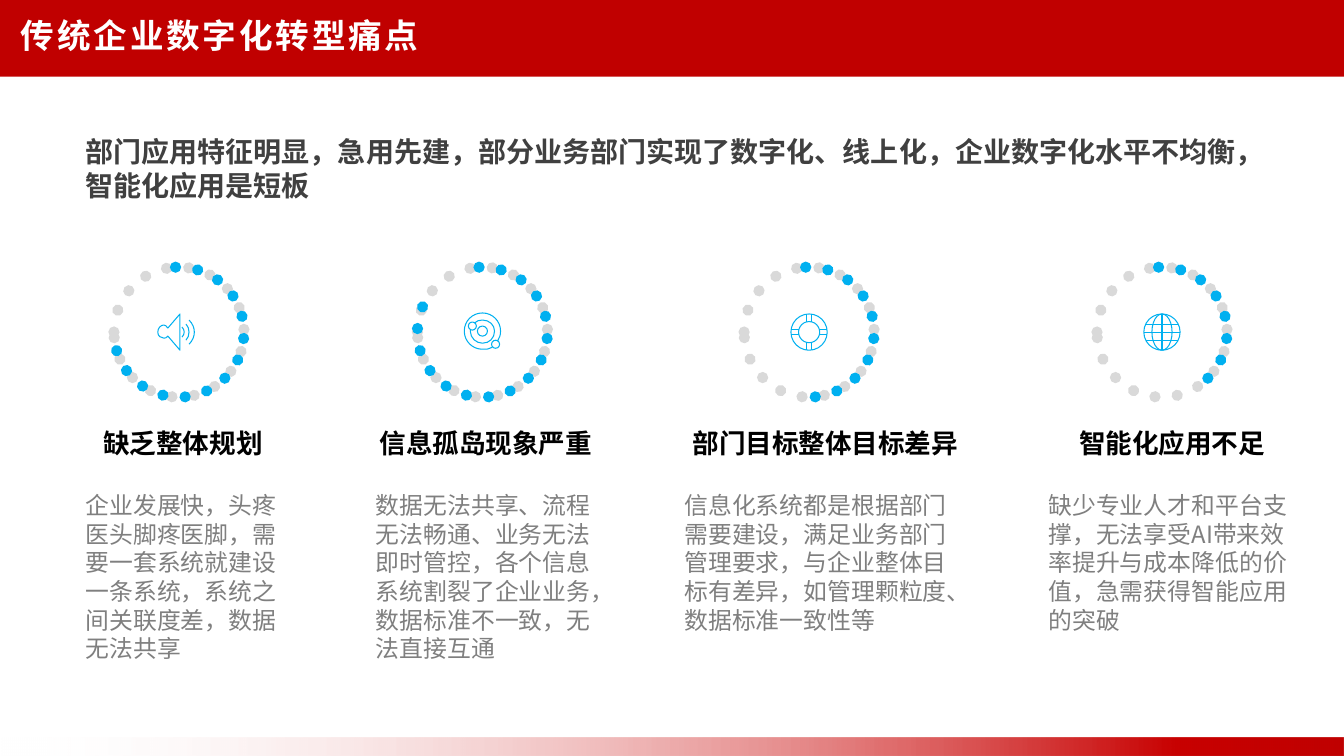
from copy import deepcopy
from dataclasses import dataclass

from lxml import etree
from pptx import Presentation
from pptx.dml.color import RGBColor
from pptx.enum.dml import MSO_LINE
from pptx.enum.shapes import MSO_CONNECTOR, MSO_SHAPE
from pptx.enum.text import MSO_ANCHOR, MSO_AUTO_SIZE, PP_ALIGN
from pptx.oxml.ns import qn
from pptx.util import Inches, Pt

RECTANGLE, OVAL, ARC = MSO_SHAPE.RECTANGLE, MSO_SHAPE.OVAL, MSO_SHAPE.ARC
STRAIGHT, ROUND_DOT = MSO_CONNECTOR.STRAIGHT, MSO_LINE.ROUND_DOT
LEFT, CENTER = PP_ALIGN.LEFT, PP_ALIGN.CENTER
TOP, MIDDLE = MSO_ANCHOR.TOP, MSO_ANCHOR.MIDDLE
GROW, FIXED = MSO_AUTO_SIZE.SHAPE_TO_FIT_TEXT, MSO_AUTO_SIZE.NONE

WHITE = RGBColor(0xFF, 0xFF, 0xFF)
BLACK = RGBColor(0x00, 0x00, 0x00)
RED = RGBColor(0xC0, 0x00, 0x00)
BRIGHT_RED = RGBColor(0xC8, 0x00, 0x00)
BLUE = RGBColor(0x00, 0xB0, 0xF0)
PALE_GRAY = RGBColor(0xD9, 0xD9, 0xD9)
MID_GRAY = RGBColor(0x7F, 0x7F, 0x7F)
DARK_GRAY = RGBColor(0x40, 0x40, 0x40)

FONT = "Noto Sans CJK SC"
LINE_HEIGHT = 1.2
SLIDE_WIDTH, SLIDE_HEIGHT = 13.33, 7.5
RING_TOP, RING_SIZE, RING_START = 2.65, 1.29, 266.97
CENTER_Y = RING_TOP + RING_SIZE / 2
TEXT_TOP = 4.19
DOT_WIDTH, ICON_WIDTH = 8, 0.75

Point = tuple[float, float]


@dataclass
class Oval:
    """An ellipse placed by its middle, relative to the ring centre."""
    x: float
    y: float
    width: float
    height: float


@dataclass
class Stroke:
    start: Point
    end: Point


@dataclass
class Curve:
    """A start point, then three Bézier points for each segment."""
    points: list[Point]
    closed: bool = False


@dataclass
class TextStyle:
    size: float
    color: RGBColor
    bold: bool = True
    align: PP_ALIGN = LEFT
    space_before: float = 0


@dataclass
class PainPoint:
    ring_left: float
    ring_end: float
    text_left: float
    text_width: float
    text_height: float
    heading: str
    body: str
    icon: list


TITLE = TextStyle(24, WHITE)
SUMMARY = TextStyle(20, DARK_GRAY)
HEADING = TextStyle(19, BLACK, align=CENTER)
BODY = TextStyle(17, MID_GRAY, bold=False, space_before=22.8)

SPEAKER = [
    Curve([(0.01, -0.18), *[(-0.11, -0.04)] * 3,
           (-0.12, -0.06), (-0.14, -0.07), (-0.15, -0.07),
           (-0.18, -0.07), (-0.21, -0.04), (-0.21, 0),
           (-0.21, 0.04), (-0.18, 0.06), (-0.15, 0.06),
           (-0.14, 0.06), (-0.12, 0.06), (-0.11, 0.04),
           *[(0.01, 0.18)] * 3], closed=True),
    *[Curve([(x, -half), (bulge, -pull), (bulge, pull), (x, half)])
      for x, half, bulge, pull in ((0.1, 0.12, 0.17, 0.05), (0.07, 0.08, 0.11, 0.04),
                                   (0.03, 0.05, 0.06, 0.02))],
]
ORBIT = [
    Curve([(0.1, 0.15), (0.07, 0.17), (0.04, 0.17), (0, 0.17),
           (-0.1, 0.17), (-0.18, 0.09), (-0.18, -0.01),
           (-0.18, -0.11), (-0.1, -0.19), (0, -0.19),
           (0.1, -0.19), (0.18, -0.11), (0.18, -0.01),
           (0.18, 0.03), (0.17, 0.06), (0.15, 0.09)]),
    Curve([(-0.08, -0.09), (-0.06, -0.11), (-0.03, -0.12), (0, -0.12),
           (0.07, -0.12), (0.12, -0.07), (0.12, -0.01),
           (0.12, 0.06), (0.07, 0.11), (0, 0.11),
           (-0.06, 0.11), (-0.12, 0.06), (-0.12, -0.01),
           (-0.12, -0.01), (-0.12, -0.01), (-0.12, -0.02)]),
    Oval(0, -0.01, 0.1, 0.1),
    Oval(-0.1, -0.06, 0.08, 0.08),
    Oval(0.13, 0.12, 0.08, 0.08),
]
LIFEBUOY = [Oval(0, 0, 0.21, 0.21), Oval(0, 0, 0.36, 0.36)]
for side in (-1, 1):
    for offset in (-0.025, 0.025):
        LIFEBUOY += [Stroke((offset, side * 0.18), (offset, side * 0.1)),
                     Stroke((side * 0.18, offset), (side * 0.1, offset))]
GLOBE = [
    Oval(0, 0, 0.36, 0.36),
    Oval(0, 0, 0.2, 0.36),
    Stroke((0, -0.18), (0, 0.18)),
    *[Stroke((half, y), (-half, y)) for y, half in ((0, 0.18), (-0.08, 0.16), (0.08, 0.16))],
]

PAIN_POINTS = [
    PainPoint(1.13, 163.88, 0.75, 2.13, 2.46, "缺乏整体规划",
              "企业发展快，头疼医头脚疼医脚，需要一套系统就建设一条系统，系统之间关联度差，数据无法共享",
              SPEAKER),
    PainPoint(7.38, 96.48, 6.69, 2.99, 2.17, "部门目标整体目标差异",
              "信息化系统都是根据部门需要建设，满足业务部门管理要求，与企业整体目标有差异，如管理颗粒度、数据标准一致性等",
              LIFEBUOY),
    PainPoint(10.88, 52.21, 10.3, 2.65, 2.17, "智能化应用不足",
              "缺少专业人才和平台支撑，无法享受AI带来效率提升与成本降低的价值，急需获得智能应用的突破",
              GLOBE),
    PainPoint(4.14, 221.43, 3.63, 2.38, 2.46, "信息孤岛现象严重",
              "数据无法共享、流程无法畅通、业务无法即时管控，各个信息系统割裂了企业业务，数据标准不一致，无法直接互通",
              ORBIT),
]


def add_plain_shape(page, kind, left: float, top: float, width: float, height: float):
    shape = page.shapes.add_shape(kind, *map(Inches, (left, top, width, height)))
    shape.shadow.inherit = False
    shape.line.fill.background()
    return shape


def set_outline(shape, color: RGBColor, width: float) -> None:
    shape.fill.background()
    shape.line.color.rgb = color
    shape.line.width = Pt(width)


def add_bands(page) -> None:
    header = add_plain_shape(page, RECTANGLE, 0, 0, SLIDE_WIDTH, 0.76)
    header.fill.solid()
    header.fill.fore_color.rgb = RED
    footer = add_plain_shape(page, RECTANGLE, 0, 7.32, SLIDE_WIDTH, 0.18)
    footer.fill.gradient()
    footer.fill.gradient_angle = 0
    stop_list = footer._element.spPr.find(".//" + qn("a:gsLst"))
    stop_list.append(deepcopy(stop_list[-1]))
    stops = ((0, WHITE), (0.88, BRIGHT_RED), (1, RED))
    for stop, (position, color) in zip(footer.fill.gradient_stops, stops):
        stop.position = position
        stop.color.rgb = color
    etree.SubElement(stop_list[0][0], qn("a:alpha")).set("val", "0")


def add_text(page, area: tuple, content: list, anchor=TOP, auto_size=GROW, spacing: int = 0) -> None:
    """Add a text box with one paragraph for each (text, style) pair."""
    frame = page.shapes.add_textbox(*map(Inches, area)).text_frame
    for name, value in dict(word_wrap=True, auto_size=auto_size, vertical_anchor=anchor).items():
        setattr(frame, name, value)
    for index, (text, style) in enumerate(content):
        para = frame.add_paragraph() if index else frame.paragraphs[0]
        layout = dict(alignment=style.align, line_spacing=Pt(style.size * LINE_HEIGHT),
                      space_before=Pt(style.space_before))
        for name, value in layout.items():
            setattr(para, name, value)
        span = para.add_run()
        span.text = text
        for name, value in dict(name=FONT, size=Pt(style.size), bold=style.bold).items():
            setattr(span.font, name, value)
        span.font.color.rgb = style.color
        properties = span._r.get_or_add_rPr()
        etree.SubElement(properties, qn("a:ea")).set("typeface", FONT)
        if spacing:
            properties.set("spc", str(spacing))


def add_ring(page, point: PainPoint) -> None:
    for kind, color in ((OVAL, PALE_GRAY), (ARC, BLUE)):
        ring = add_plain_shape(page, kind, point.ring_left, RING_TOP, RING_SIZE, RING_SIZE)
        set_outline(ring, color, DOT_WIDTH)
        ring.line.dash_style = ROUND_DOT
        ring._element.spPr.find(qn("a:ln")).set("cap", "rnd")
    for index, angle in enumerate((RING_START, point.ring_end)):
        ring.adjustments[index] = angle * 0.6


def add_curve(page, points: list, closed: bool) -> None:
    builder = page.shapes.build_freeform(*points[0])
    builder.add_line_segments(points[1:], close=closed)
    shape = builder.convert_to_shape()
    shape.shadow.inherit = False
    set_outline(shape, BLUE, ICON_WIDTH)
    segments = shape._element.spPr.findall(".//" + qn("a:lnTo"))
    for first, second, third in zip(segments[::3], segments[1::3], segments[2::3]):
        bend = etree.Element(qn("a:cubicBezTo"))
        first.addprevious(bend)
        for segment in (first, second, third):
            bend.append(segment[0])
            segment.getparent().remove(segment)


def add_icon(page, parts: list, center_x: float) -> None:
    def place(spot: Point) -> Point:
        return Inches(center_x + spot[0]), Inches(CENTER_Y + spot[1])

    for part in parts:
        if isinstance(part, Oval):
            shape = add_plain_shape(page, OVAL, center_x + part.x - part.width / 2,
                                    CENTER_Y + part.y - part.height / 2, part.width, part.height)
            set_outline(shape, BLUE, ICON_WIDTH)
        elif isinstance(part, Curve):
            add_curve(page, [place(spot) for spot in part.points], part.closed)
        else:
            line = page.shapes.add_connector(STRAIGHT, *place(part.start), *place(part.end))
            line.line.color.rgb = BLUE
            line.line.width = Pt(ICON_WIDTH)
            etree.SubElement(line._element.spPr, qn("a:effectLst"))


def main() -> None:
    deck = Presentation()
    deck.slide_width, deck.slide_height = Inches(SLIDE_WIDTH), Inches(SLIDE_HEIGHT)
    page = deck.slides.add_slide(deck.slide_layouts[6])
    add_bands(page)
    add_text(page, (0.11, 0.05, 10.16, 0.6), [("传统企业数字化转型痛点", TITLE)], MIDDLE, FIXED, 200)
    summary = "部门应用特征明显，急用先建，部分业务部门实现了数字化、线上化，企业数字化水平不均衡，智能化应用是短板"
    add_text(page, (0.75, 1.29, 12.1, 0.77), [(summary, SUMMARY)])
    for point in PAIN_POINTS:
        add_ring(page, point)
        add_text(page, (point.text_left, TEXT_TOP, point.text_width, point.text_height),
                 [(point.heading, HEADING), (point.body, BODY)])
        add_icon(page, point.icon, point.ring_left + RING_SIZE / 2)
    deck.save("out.pptx")


if __name__ == "__main__":
    main()
